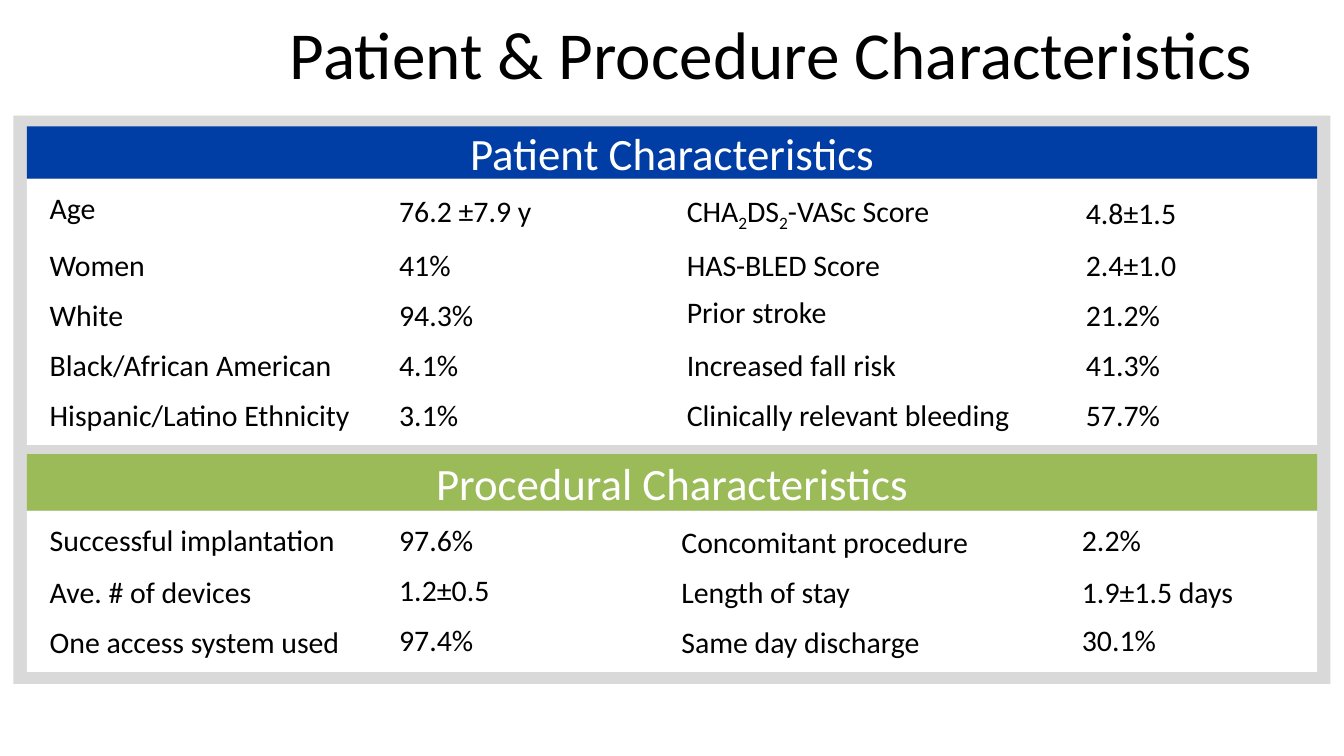
from pptx import Presentation
from pptx import util as u
from pptx.dml import color
from pptx.enum import shapes, text

COLORS = {"frame": "D9D9D9", "white": "FFFFFF", "black": "000000",
          "patient": "003EA5", "procedure": "9BBB59"}
FONT = "Calibri"
SLIDE_W = 10
SLIDE_H = SLIDE_W * 9 / 16

PATIENT_ROWS = [
    ["Age", "76.2 ±7.9 y", "CHA|2|DS|2|-VASc Score", "4.8±1.5"],
    ["Women", "41%", "HAS-BLED Score", "2.4±1.0"],
    ["White", "94.3%", "Prior stroke", "21.2%"],
    ["Black/African American", "4.1%", "Increased fall risk", "41.3%"],
    ["Hispanic/Latino Ethnicity", "3.1%", "Clinically relevant bleeding", "57.7%"],
]
PROCEDURE_ROWS = [
    ["Successful implantation", "97.6%", "Concomitant procedure", "2.2%"],
    ["Ave. # of devices", "1.2±0.5", "Length of stay", "1.9±1.5 days"],
    ["One access system used", "97.4%", "Same day discharge", "30.1%"],
]
PATIENT_TIGHT = {(0, 0), (2, 2)}
PROCEDURE_TIGHT = {(0, 0), (0, 1), (0, 3), (1, 1), (2, 1), (2, 3)}


def rgb(name):
    """Look up a named colour."""
    return color.RGBColor.from_string(COLORS[name])


def style(r, size, name):
    """Set the font of a run."""
    r.font.name = FONT
    r.font.size = u.Pt(size)
    r.font.color.rgb = rgb(name)


def add_rect(s, x, y, w, h, fill):
    """Add a plain filled rectangle."""
    sp = s.shapes.add_shape(shapes.MSO_SHAPE.RECTANGLE, u.Inches(x),
                            u.Inches(y), u.Inches(w), u.Inches(h))
    sp.shadow.inherit = False
    sp.fill.solid()
    sp.fill.fore_color.rgb = rgb(fill)
    sp.line.fill.background()
    return sp


def add_title(s, x, y, w, h, label):
    """Place and format the title placeholder."""
    sp = s.shapes.title
    sp.left, sp.top, sp.width, sp.height = map(u.Inches, (x, y, w, h))
    tf = sp.text_frame
    tf.text = label
    tf.vertical_anchor = text.MSO_ANCHOR.MIDDLE
    p = tf.paragraphs[0]
    p.alignment = text.PP_ALIGN.CENTER
    p.line_spacing = u.Pt(32)
    style(p.runs[0], 36, "black")


def fill_cell(cell, label, tight, anchor):
    """Write one cell; odd parts between bars are subscripts."""
    cell.fill.background()
    cell.vertical_anchor = anchor
    p = cell.text_frame.paragraphs[0]
    if tight:
        p.line_spacing = 0.9
    for i, part in enumerate(label.split("|")):
        r = p.add_run()
        r.text = part
        style(r, 16, "black")
        if i % 2:
            r._r.get_or_add_rPr().set("baseline", "-25000")


def add_table(s, x, y, widths, row_h, rows, tight):
    """Add an unbanded table of labels and values."""
    frame = s.shapes.add_table(len(rows), len(widths), u.Inches(x), u.Inches(y),
                               u.Inches(sum(widths)), u.Inches(row_h * len(rows)))
    table = frame.table
    table.first_row = table.horz_banding = False
    for column, width in zip(table.columns, widths):
        column.width = u.Inches(width)
    for i, row in enumerate(rows):
        table.rows[i].height = u.Inches(row_h)
        for j, label in enumerate(row):
            is_tight = (i, j) in tight
            top = is_tight or j < 2
            anchor = text.MSO_ANCHOR.TOP if top else text.MSO_ANCHOR.MIDDLE
            fill_cell(table.cell(i, j), label, is_tight, anchor)


def add_section(s, x, y, w, h, head_h, heading, fill, widths, row_h, rows, tight):
    """Add a heading bar over a white panel with its table."""
    add_rect(s, x, y + head_h, w, h - head_h, "white")
    tf = add_rect(s, x, y, w, head_h, fill).text_frame
    tf.text = heading
    tf.vertical_anchor = text.MSO_ANCHOR.MIDDLE
    p = tf.paragraphs[0]
    p.alignment = text.PP_ALIGN.CENTER
    style(p.runs[0], 24, "white")
    add_table(s, x + 0.07, y + head_h + 0.06, widths, row_h, rows, tight)


def main():
    """Build the slide and save it."""
    prs = Presentation()
    prs.slide_width, prs.slide_height = u.Inches(SLIDE_W), u.Inches(SLIDE_H)
    s = prs.slides.add_slide(prs.slide_layouts[5])
    add_title(s, 1.98, 0, 7.52, 0.94, "Patient & Procedure Characteristics")
    add_rect(s, 0.1, 0.86, 9.8, 4.23, "frame")
    add_section(s, 0.2, 0.94, 9.6, 2.37, 0.39, "Patient Characteristics",
                "patient", [2.6, 2.14, 2.97, 1.73], 0.37,
                PATIENT_ROWS, PATIENT_TIGHT)
    add_section(s, 0.2, 3.38, 9.6, 1.62, 0.42, "Procedural Characteristics",
                "procedure", [2.6, 2.1, 2.98, 1.72], 0.36,
                PROCEDURE_ROWS, PROCEDURE_TIGHT)
    prs.save("out.pptx")


if __name__ == "__main__":
    main()
